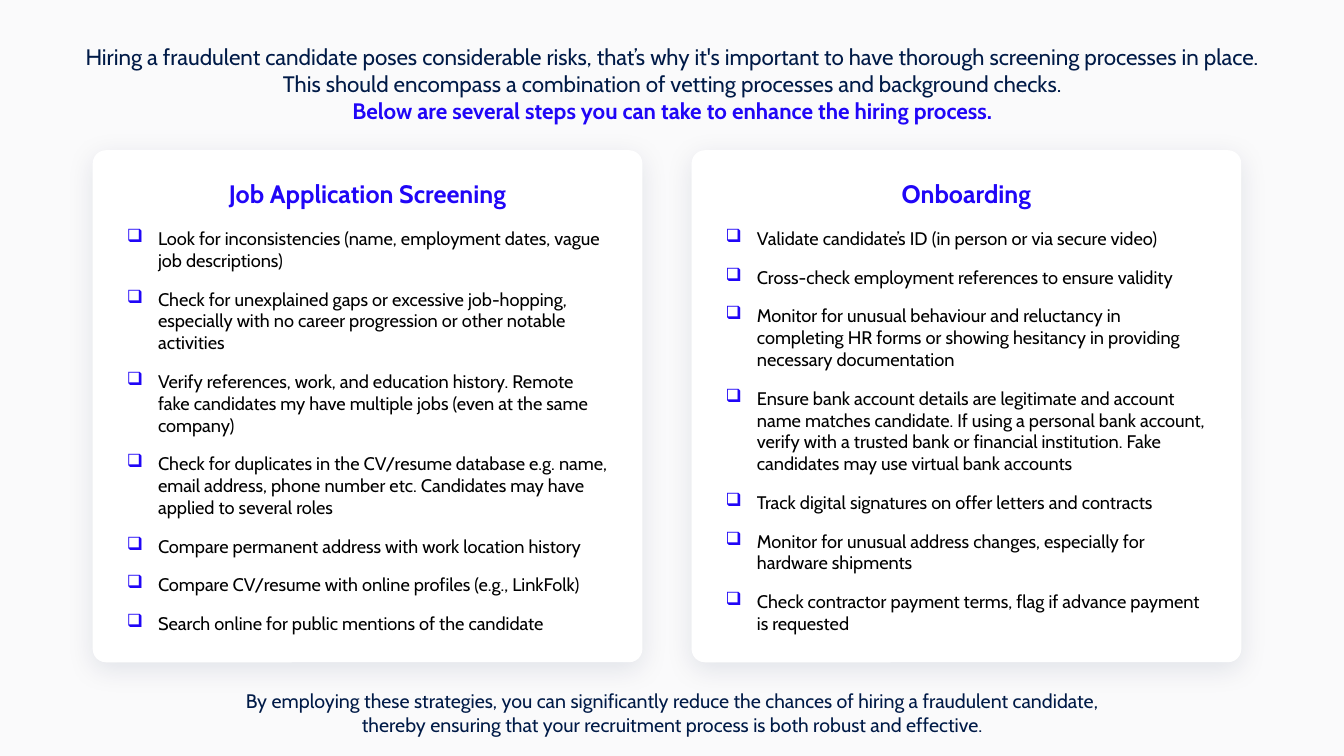
from lxml import etree
from pptx import Presentation
from pptx.dml.color import RGBColor
from pptx.enum.shapes import MSO_SHAPE
from pptx.enum.text import MSO_ANCHOR, PP_ALIGN
from pptx.oxml.ns import qn
from pptx.util import Emu, Inches, Pt

ROUNDED = MSO_SHAPE.ROUNDED_RECTANGLE
TOP, MIDDLE = MSO_ANCHOR.TOP, MSO_ANCHOR.MIDDLE
LEFT, CENTER = PP_ALIGN.LEFT, PP_ALIGN.CENTER

FONT = "Cabin"
NAVY, BLUE, BLACK, WHITE, PAPER = "001A47", "2006F7", "000000", "FFFFFF", "FAFAFB"

INTRO = {"size": Pt(16), "bold": False, "color": NAVY}
INTRO_BOLD = {"size": Pt(16), "bold": True, "color": BLUE}
HEADING = {"size": Pt(18), "bold": True, "color": BLUE}
ITEM = {"size": Pt(13), "bold": False, "color": BLACK}
CLOSING = {"size": Pt(14), "bold": False, "color": NAVY}

CARD_LEFT, CARD_PITCH, CARD_WIDTH = 6.9, 44.56, 40.9
CARD_TOP, CARD_HEIGHT = 19.87, 67.73
TEXT_LEFT, TEXT_WIDTH = 5.85, 88.37

INTRO_LINES = [
    ("Hiring a fraudulent candidate poses considerable risks, that’s why it's important "
     "to have thorough screening processes in place. This should encompass a combination "
     "of vetting processes and background checks.", INTRO),
    ("Below are several steps you can take to enhance the hiring process.", INTRO_BOLD),
]
CLOSING_LINES = [
    ("By employing these strategies, you can significantly reduce the chances of hiring "
     "a fraudulent candidate,", CLOSING),
    ("thereby ensuring that your recruitment process is both robust and effective.", CLOSING),
]
CHECKLISTS = {
    "Job Application Screening": [
        "Look for inconsistencies (name, employment dates, vague job descriptions)",
        "Check for unexplained gaps or excessive job-hopping, especially with no career "
        "progression or other notable activities",
        "Verify references, work, and education history. Remote fake candidates my have "
        "multiple jobs (even at the same company)",
        "Check for duplicates in the CV/resume database e.g. name, email address, phone "
        "number etc. Candidates may have applied to several roles",
        "Compare permanent address with work location history",
        "Compare CV/resume with online profiles (e.g., LinkFolk)",
        "Search online for public mentions of the candidate",
    ],
    "Onboarding": [
        "Validate candidate’s ID (in person or via secure video)",
        "Cross-check employment references to ensure validity",
        "Monitor for unusual behaviour and reluctancy in completing HR forms or showing "
        "hesitancy in providing necessary documentation",
        "Ensure bank account details are legitimate and account name matches candidate. "
        "If using a personal bank account, verify with a trusted bank or financial "
        "institution. Fake candidates may use virtual bank accounts",
        "Track digital signatures on offer letters and contracts",
        "Monitor for unusual address changes, especially for hardware shipments",
        "Check contractor payment terms, flag if advance payment is requested",
    ],
}


def color(value):
    return RGBColor.from_string(value)


def add_node(parent, tag, **attributes):
    return etree.SubElement(parent, qn(tag), {key: str(value) for key, value in attributes.items()})


class SlideBuilder:
    def __init__(self, deck):
        self.deck = deck
        self.slide = deck.slides.add_slide(deck.slide_layouts[6])
        background = self.slide.background.fill
        background.solid()
        background.fore_color.rgb = color(PAPER)

    def place(self, left, top, width, height):
        wide, high = self.deck.slide_width / 100, self.deck.slide_height / 100
        return Emu(int(left * wide)), Emu(int(top * high)), Emu(int(width * wide)), Emu(int(height * high))

    def frame(self, shape, anchor, side, edge):
        settings = {
            "word_wrap": True, "vertical_anchor": anchor,
            "margin_left": Inches(side), "margin_right": Inches(side),
            "margin_top": Inches(edge), "margin_bottom": Inches(edge),
        }
        for name, value in settings.items():
            setattr(shape.text_frame, name, value)

    def paragraph(self, shape, text, style, align=CENTER, after=0):
        frame = shape.text_frame
        para = frame.paragraphs[0] if not frame.text else frame.add_paragraph()
        for name, value in {"alignment": align, "space_after": Pt(after)}.items():
            setattr(para, name, value)
        span = para.add_run()
        span.text = text
        span.font.name = FONT
        for name, value in style.items():
            if name == "color":
                span.font.color.rgb = color(value)
            else:
                setattr(span.font, name, value)
        return para

    def text(self, lines, top, height, side=0, edge=0):
        box = self.slide.shapes.add_textbox(*self.place(TEXT_LEFT, top, TEXT_WIDTH, height))
        self.frame(box, TOP, side, edge)
        for text, style in lines:
            self.paragraph(box, text, style)

    def bullet(self, para):
        properties = para._p.get_or_add_pPr()
        properties.set("marL", str(Inches(0.31)))
        properties.set("indent", str(-Inches(0.31)))
        add_node(add_node(properties, "a:buClr"), "a:srgbClr", val=BLUE)
        add_node(properties, "a:buChar", char="❑")

    def soften(self, shape):
        shape.shadow.inherit = False
        properties = shape._element.spPr
        shadow = add_node(properties.find(qn("a:effectLst")), "a:outerShdw", blurRad=Pt(20),
                          dist=Pt(5), dir=90 * 60000, algn="t", rotWithShape=0)
        add_node(add_node(shadow, "a:srgbClr", val=NAVY), "a:alpha", val=10000)
        outline = properties.find(qn("a:ln")).find(".//" + qn("a:srgbClr"))
        add_node(outline, "a:alpha", val=13000)

    def card(self, column, heading, items):
        left = CARD_LEFT + column * CARD_PITCH
        card = self.slide.shapes.add_shape(ROUNDED, *self.place(left, CARD_TOP, CARD_WIDTH, CARD_HEIGHT))
        card.adjustments[0] = 0.026
        card.fill.solid()
        card.fill.fore_color.rgb = color(WHITE)
        card.line.color.rgb = color(WHITE)
        card.line.width = Pt(0.5)
        self.soften(card)
        self.frame(card, MIDDLE, 0.3, 0.05)
        self.paragraph(card, heading, HEADING, after=13.4)
        for item in items:
            self.bullet(self.paragraph(card, item, ITEM, LEFT, 12))


def main():
    deck = Presentation()
    deck.slide_width, deck.slide_height = Inches(13.33), Inches(7.5)
    page = SlideBuilder(deck)
    page.text(INTRO_LINES, 5.73, 14.13)
    for column, (heading, items) in enumerate(CHECKLISTS.items()):
        page.card(column, heading, items)
    page.text(CLOSING_LINES, 90.53, 7.6, side=0.1, edge=0.05)
    deck.save("out.pptx")


if __name__ == "__main__":
    main()
